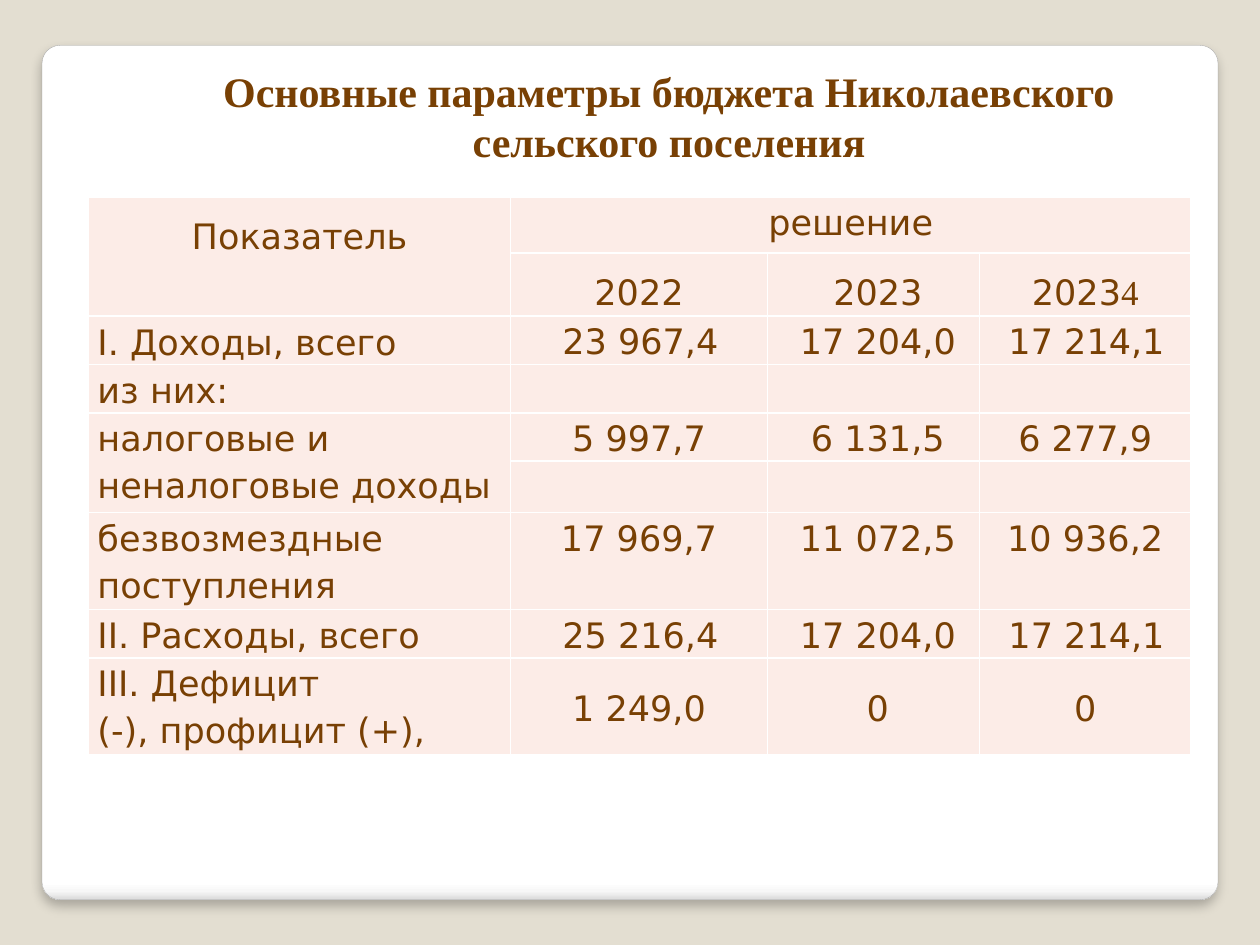
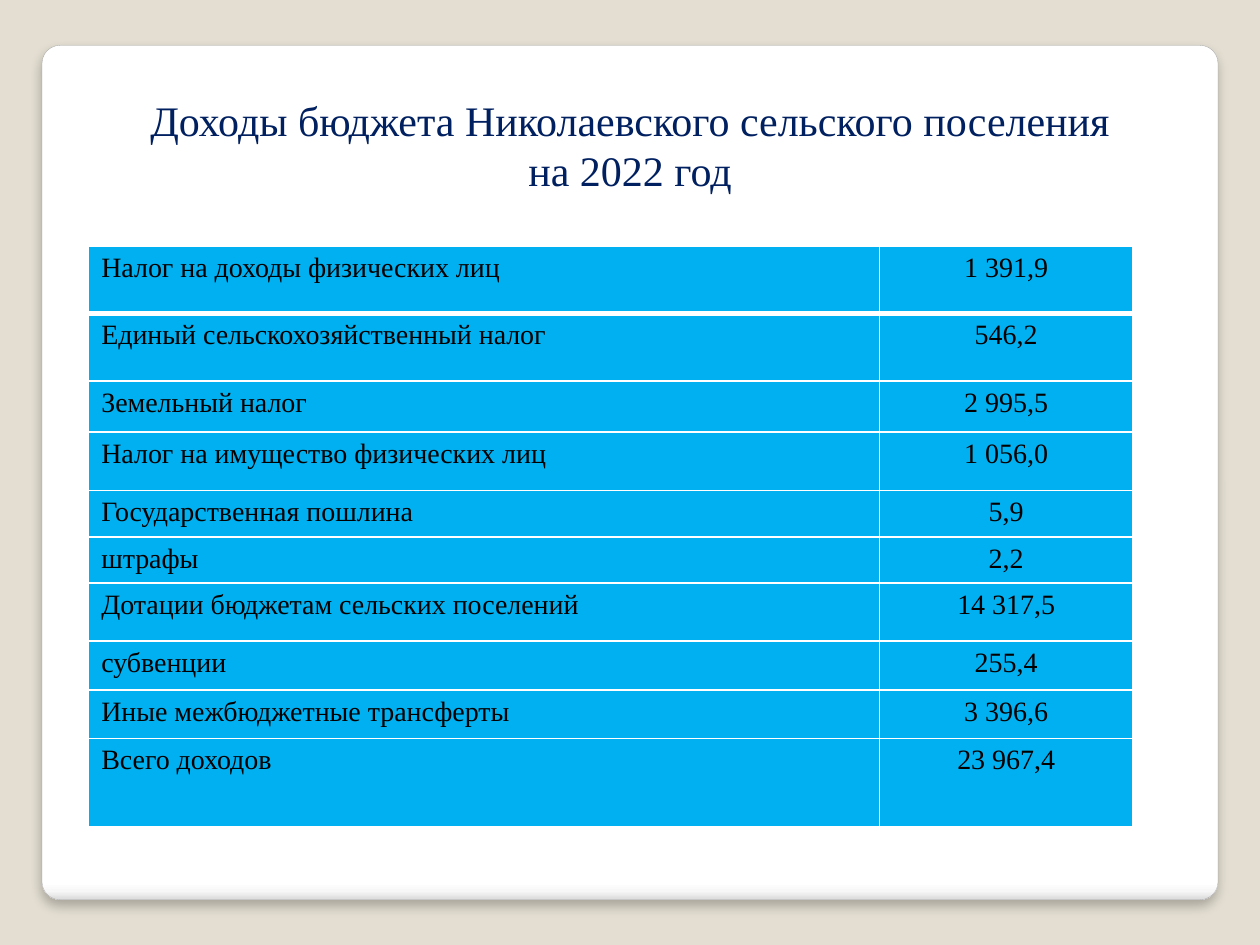
"""Builds two budget slides with a shared card, title and table style."""
from pptx import Presentation, oxml as ox, util as u
from pptx.dml.color import RGBColor
from pptx.enum import shapes as sh, text as tx
from pptx.oxml import ns

SAND = RGBColor(0xE3, 0xDE, 0xD1)
GREY = RGBColor(0xA4, 0xA4, 0xA4)
BROWN = RGBColor(0x78, 0x40, 0x04)
ROSE = RGBColor(0xFC, 0xEC, 0xE7)
NAVY = RGBColor(0x00, 0x20, 0x60)
SKY = RGBColor(0x00, 0xB0, 0xF0)
BLACK = RGBColor(0, 0, 0)
WHITE = RGBColor(0xFF, 0xFF, 0xFF)
SERIF, SANS = "Times New Roman", "DejaVu Sans"
LEFT, MID = tx.PP_ALIGN.LEFT, tx.PP_ALIGN.CENTER
TOP, CORE = tx.MSO_ANCHOR.TOP, tx.MSO_ANCHOR.MIDDLE
STOPS = ((0, "FFFFFF"), (98, "FFFFFF"), (99, "F7F7F7"), (100, "DADADA"))

SUMS = (
    ("I. Доходы, всего", "23 967,4", "17 204,0", "17 214,1"),
    ("из них:", "", "", ""),
    ("налоговые и неналоговые доходы", "5 997,7", "6 131,5", "6 277,9"),
    ("", "", "", ""),
    ("безвозмездные поступления", "17 969,7", "11 072,5", "10 936,2"),
    ("II. Расходы, всего", "25 216,4", "17 204,0", "17 214,1"),
    ("III. Дефицит\n(-), профицит (+),", "1 249,0", "0", "0"),
)
TAXES = (
    ("Налог на доходы физических лиц", "1 391,9"),
    ("Единый сельскохозяйственный налог", "546,2"),
    ("Земельный налог", "2 995,5"),
    ("Налог на имущество физических лиц", "1 056,0"),
    ("Государственная пошлина", "5,9"),
    ("штрафы", "2,2"),
    ("Дотации бюджетам сельских поселений", "14 317,5"),
    ("субвенции", "255,4"),
    ("Иные межбюджетные трансферты", "3 396,6"),
    ("Всего доходов", "23 967,4"),
)


def node(body):
    """Make a drawing element from its XML, with the namespace added."""
    tag, rest = body[1:].split(" ", 1)
    return ox.parse_xml(f"<{tag} {ns.nsdecls('a')} {rest}")


def write(frame, words, font=SERIF, size=24, hue=BLACK, bold=False,
          align=MID, space=None, dent=0):
    """Write each line of the words as a formatted paragraph."""
    for i, line in enumerate(words.split("\n")):
        para = frame.add_paragraph() if i else frame.paragraphs[0]
        para.alignment, para.line_spacing = align, space
        if dent:
            para._p.get_or_add_pPr().set("indent", str(u.Pt(dent)))
        add_run(para, line, font, size, hue, bold)


def add_run(para, words, font, size, hue, bold=False):
    """Add one run to a paragraph."""
    run = para.add_run()
    run.text = words
    run.font.name, run.font.size, run.font.bold = font, u.Pt(size), bold
    run.font.color.rgb = hue


def add_page(deck):
    """Add a blank slide with the sand ground and the white card."""
    page = deck.slides.add_slide(deck.slide_layouts[6])
    page.background.fill.solid()
    page.background.fill.fore_color.rgb = SAND
    card = page.shapes.add_shape(
        sh.MSO_SHAPE.ROUNDED_RECTANGLE,
        u.Pt(24), u.Pt(25.9), u.Pt(672), u.Pt(488.2))
    card.adjustments[0] = 0.021
    card.line.color.rgb, card.line.width = GREY, u.Pt(0.16)
    card.shadow.inherit = False
    stops = "".join(f'<a:gs pos="{at * 1000}"><a:srgbClr val="{hue}"/></a:gs>'
                    for at, hue in STOPS)
    props = card._element.spPr
    props.insert(2, node(f'<a:gradFill rotWithShape="1"><a:gsLst>{stops}</a:gsLst>'
                         '<a:lin ang="5400000" scaled="0"/></a:gradFill>'))
    props.find(ns.qn("a:effectLst")).append(node(
        f'<a:outerShdw blurRad="{u.Pt(6)}" dist="{u.Pt(4)}" dir="5400000" rotWithShape="0">'
        '<a:srgbClr val="000000"><a:alpha val="25000"/></a:srgbClr></a:outerShdw>'))
    return page


def add_title(page, words, x, y, high, **style):
    """Add the heading in a wrapping text box."""
    box = page.shapes.add_textbox(u.Pt(x), u.Pt(y), u.Pt(607.7), u.Pt(high))
    box.text_frame.word_wrap = True
    write(box.text_frame, words, **style)


def add_grid(page, y, cols, rows, hue, thick=1):
    """Add a plain table with white rules, the first one as thick as given."""
    grid = page.shapes.add_table(
        len(rows), len(cols), u.Pt(50.7), u.Pt(y),
        u.Pt(sum(cols)), u.Pt(sum(rows))).table
    grid.first_row = grid.horz_banding = False
    for col, wide in zip(grid.columns, cols):
        col.width = u.Pt(wide)
    for i, (row, high) in enumerate(zip(grid.rows, rows)):
        row.height = u.Pt(high)
        for cell in row.cells:
            cell.fill.solid()
            cell.fill.fore_color.rgb = hue
            rule(cell, thick if i == 1 else 1, thick if i == 0 else 1)
    return grid


def rule(cell, top, base):
    """Draw the four white borders of a cell."""
    props = cell._tc.get_or_add_tcPr()
    for i, (side, wide) in enumerate(zip("LRTB", (1, 1, top, base))):
        props.insert(i, node(f'<a:ln{side} w="{u.Pt(wide)}"><a:solidFill>'
                             f'<a:srgbClr val="{WHITE}"/></a:solidFill></a:ln{side}>'))


def fill_sums(grid):
    """Fill the table of the main budget figures."""
    style = dict(font=SANS, size=20, hue=BROWN)
    for cell in grid.iter_cells():
        cell.margin_left = cell.margin_right = u.Pt(5)
        cell.margin_top = cell.margin_bottom = 0
    for top, end in (((0, 0), (1, 0)), ((0, 1), (0, 3)), ((4, 0), (5, 0))):
        grid.cell(*top).merge(grid.cell(*end))
    write(grid.cell(0, 0).text_frame, "Показатель", space=1.5, dent=-5, **style)
    write(grid.cell(0, 1).text_frame, "решение", space=1.15, **style)
    for j, year in enumerate(("2022", "2023", "2023"), 1):
        write(grid.cell(1, j).text_frame, year, space=1.5,
              dent=5 if j == 2 else 0, **style)
    add_run(grid.cell(1, 3).text_frame.paragraphs[0], "4", SERIF, 20, BROWN)
    dents = {2: 1.5, 4: -5, 6: -5, 7: 1.5}
    for i, row in enumerate(SUMS, 2):
        for j, words in enumerate(row):
            if not words:
                continue
            cell = grid.cell(i, j)
            core = i in (2, 3, 7) if j == 0 else i == 8
            cell.vertical_anchor = CORE if core else TOP
            dent = (0, dents.get(i, 0), 5, dents.get(i, 0))[j]
            write(cell.text_frame, words, align=MID if j else LEFT,
                  space=1.15, dent=dent, **style)


def fill_taxes(grid):
    """Fill the table of the income items."""
    for i, row in enumerate(TAXES):
        for j, words in enumerate(row):
            write(grid.cell(i, j).text_frame, words, size=16,
                  align=MID if j else LEFT)


def main():
    """Build both slides and save them."""
    deck = Presentation()
    deck.slide_width, deck.slide_height = u.Pt(720), u.Pt(540)

    page = add_page(deck)
    add_title(page, "Основные параметры бюджета Николаевского сельского поселения",
              78.5, 33.8, 65.5, hue=BROWN, bold=True)
    fill_sums(add_grid(page, 112.6, (241, 147, 121, 121),
                       (32, 36, 27.5, 27.5, 27.5, 29.5, 55.2, 27.5, 55.2), ROSE))

    page = add_page(deck)
    add_title(page, "Доходы бюджета Николаевского сельского поселения\nна 2022 год",
              56.2, 50.4, 472.3, hue=NAVY)
    fill_taxes(add_grid(page, 140.6, (452, 144.5),
                        (38.6, 38.6, 29, 33.6, 26.2, 26.2, 33.2, 27.8, 27.8, 50.3),
                        SKY, thick=3))
    deck.save("out.pptx")


if __name__ == "__main__":
    main()
